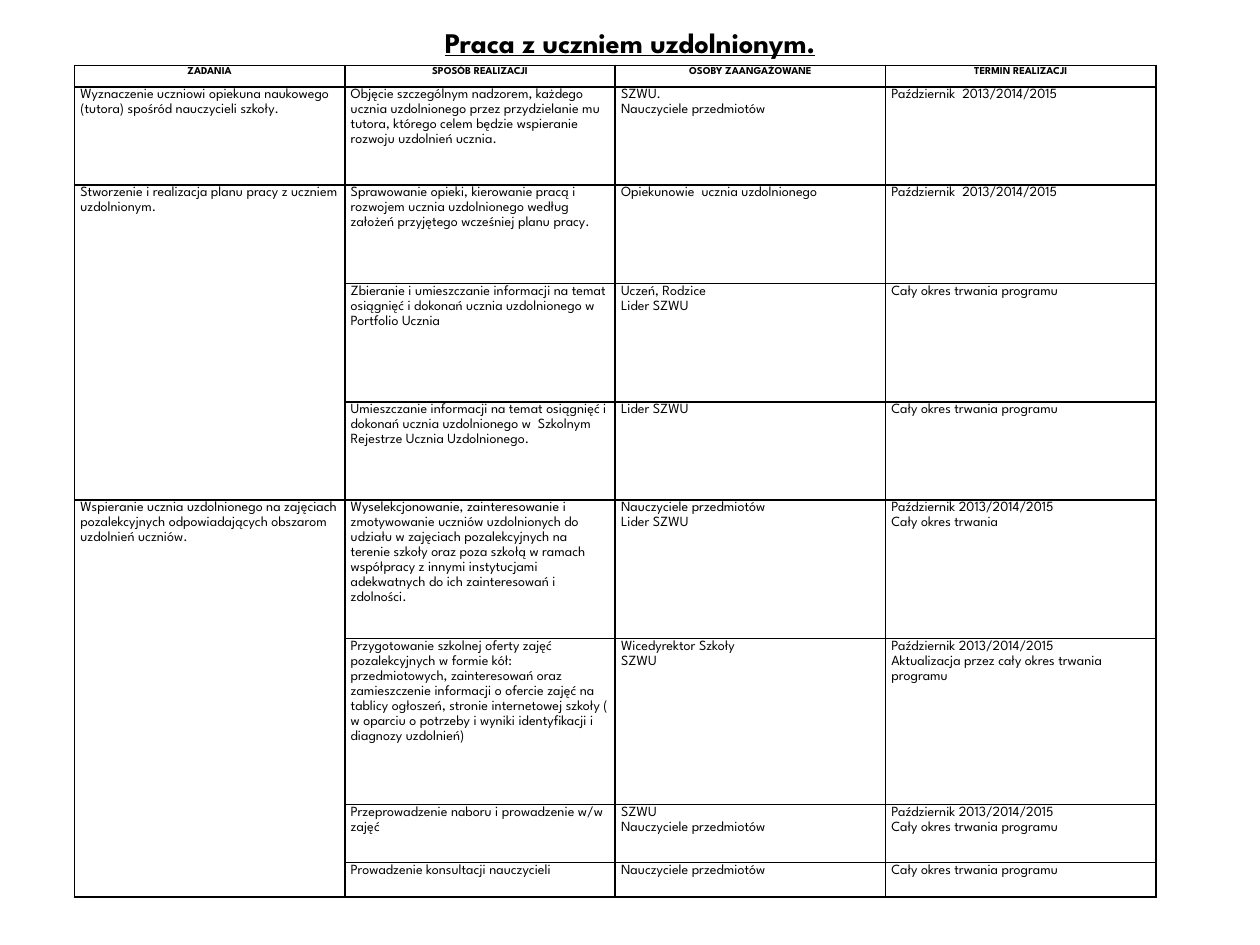
from lxml import etree
from pptx import Presentation
from pptx import util as u
from pptx.dml.color import RGBColor
from pptx.enum import text
from pptx.oxml import ns

FONT = "League Spartan"
BLACK = "000000"
COLUMN_WIDTH = 5.45
ROW_HEIGHTS = [0.43, 1.98, 1.98, 2.39, 1.98, 2.79, 3.35, 1.17, 0.69]
TASK_SPANS = [(2, 4), (5, 8)]
WHOLE_PROGRAM = "Cały okres trwania programu"

PLAN = [
    ["ZADANIA", "SPOSÓB REALIZACJI", "OSOBY ZAANGAŻOWANE", "TERMIN REALIZACJI"],
    [
        "Wyznaczenie uczniowi opiekuna naukowego (tutora) spośród nauczycieli szkoły.",
        "Objęcie szczególnym nadzorem, każdego ucznia uzdolnionego przez przydzielanie mu "
        "tutora, którego celem będzie wspieranie rozwoju uzdolnień ucznia.",
        "SZWU.\nNauczyciele przedmiotów",
        "Październik  2013/2014/2015",
    ],
    [
        "Stworzenie i realizacja planu pracy z uczniem uzdolnionym.",
        "Sprawowanie opieki, kierowanie pracą i rozwojem ucznia uzdolnionego według "
        "założeń przyjętego wcześniej planu pracy.",
        "Opiekunowie  ucznia uzdolnionego",
        "Październik  2013/2014/2015",
    ],
    [
        "",
        "Zbieranie i umieszczanie informacji na temat osiągnięć i dokonań ucznia "
        "uzdolnionego w  Portfolio Ucznia",
        "Uczeń, Rodzice\nLider SZWU",
        WHOLE_PROGRAM,
    ],
    [
        "",
        "Umieszczanie informacji na temat osiągnięć i dokonań ucznia uzdolnionego w  "
        "Szkolnym Rejestrze Ucznia Uzdolnionego.",
        "Lider SZWU",
        WHOLE_PROGRAM,
    ],
    [
        "Wspieranie ucznia uzdolnionego na zajęciach pozalekcyjnych odpowiadających "
        "obszarom uzdolnień uczniów.",
        "Wyselekcjonowanie, zainteresowanie i zmotywowanie uczniów uzdolnionych do udziału "
        "w zajęciach pozalekcyjnych na terenie szkoły oraz poza szkołą w ramach współpracy "
        "z innymi instytucjami adekwatnych do ich zainteresowań i zdolności.",
        "Nauczyciele przedmiotów\nLider SZWU",
        "Październik 2013/2014/2015\nCały okres trwania",
    ],
    [
        "",
        "Przygotowanie szkolnej oferty zajęć pozalekcyjnych w formie kół: przedmiotowych, "
        "zainteresowań oraz zamieszczenie informacji o ofercie zajęć na tablicy ogłoszeń, "
        "stronie internetowej szkoły ( w oparciu o potrzeby i wyniki identyfikacji i "
        "diagnozy uzdolnień)",
        "Wicedyrektor Szkoły\nSZWU",
        "Październik 2013/2014/2015\nAktualizacja przez cały okres trwania programu",
    ],
    [
        "",
        "Przeprowadzenie naboru i prowadzenie w/w zajęć",
        "SZWU\nNauczyciele przedmiotów",
        "Październik 2013/2014/2015\n" + WHOLE_PROGRAM,
    ],
    [
        "",
        "Prowadzenie konsultacji nauczycieli",
        "Nauczyciele przedmiotów",
        WHOLE_PROGRAM,
    ],
]


def color(value):
    return RGBColor.from_string(value)


def style_font(font, size, bold):
    font.name = FONT
    font.size = u.Pt(size)
    font.bold = bold
    font.color.rgb = color(BLACK)


def add_title(slide, wording):
    title = slide.shapes.title
    title.left, title.top = u.Cm(1.3), u.Cm(0.5)
    title.width, title.height = u.Cm(22.8), u.Cm(2.34)
    frame = title.text_frame
    frame.text = wording
    frame.auto_size = text.MSO_AUTO_SIZE.NONE
    frame.vertical_anchor = text.MSO_ANCHOR.TOP
    frame.margin_top = 0
    heading = frame.paragraphs[0]
    heading.alignment = text.PP_ALIGN.CENTER
    style_font(heading.font, 16.2, True)
    heading.font.underline = True


def add_borders(cell):
    properties = cell._tc.get_or_add_tcPr()
    for side in ("a:lnL", "a:lnR", "a:lnT", "a:lnB"):
        line = etree.SubElement(properties, ns.qn(side), w=str(u.Pt(1)))
        fill = etree.SubElement(line, ns.qn("a:solidFill"))
        etree.SubElement(fill, ns.qn("a:srgbClr"), val=BLACK)


def fill_cell(cell, wording, is_header):
    add_borders(cell)
    cell.fill.background()
    cell.margin_left = cell.margin_right = u.Cm(0.12)
    cell.margin_top = cell.margin_bottom = 0
    cell.text = wording
    for paragraph in cell.text_frame.paragraphs:
        paragraph.line_spacing = 1.15
        paragraph.alignment = text.PP_ALIGN.CENTER if is_header else text.PP_ALIGN.LEFT
        style_font(paragraph.font, 6 if is_header else 8, is_header)


def add_plan(slide):
    columns = len(PLAN[0])
    plan = slide.shapes.add_table(
        len(PLAN), columns, u.Cm(1.5), u.Cm(1.32),
        u.Cm(COLUMN_WIDTH * columns), u.Cm(sum(ROW_HEIGHTS)),
    ).table
    plan.horz_banding = False
    plan.first_row = False
    for column in plan.columns:
        column.width = u.Cm(COLUMN_WIDTH)
    for row, height in zip(plan.rows, ROW_HEIGHTS):
        row.height = u.Cm(height)
    for row_index, entries in enumerate(PLAN):
        for column_index, wording in enumerate(entries):
            fill_cell(plan.cell(row_index, column_index), wording, row_index == 0)
    for first, last in TASK_SPANS:
        plan.cell(first, 0).merge(plan.cell(last, 0))


def main():
    deck = Presentation()
    deck.slide_width, deck.slide_height = u.Cm(25.4), u.Cm(19.05)
    slide = deck.slides.add_slide(deck.slide_layouts[5])
    add_title(slide, "Praca z uczniem uzdolnionym.")
    add_plan(slide)
    deck.save("out.pptx")


if __name__ == "__main__":
    main()
